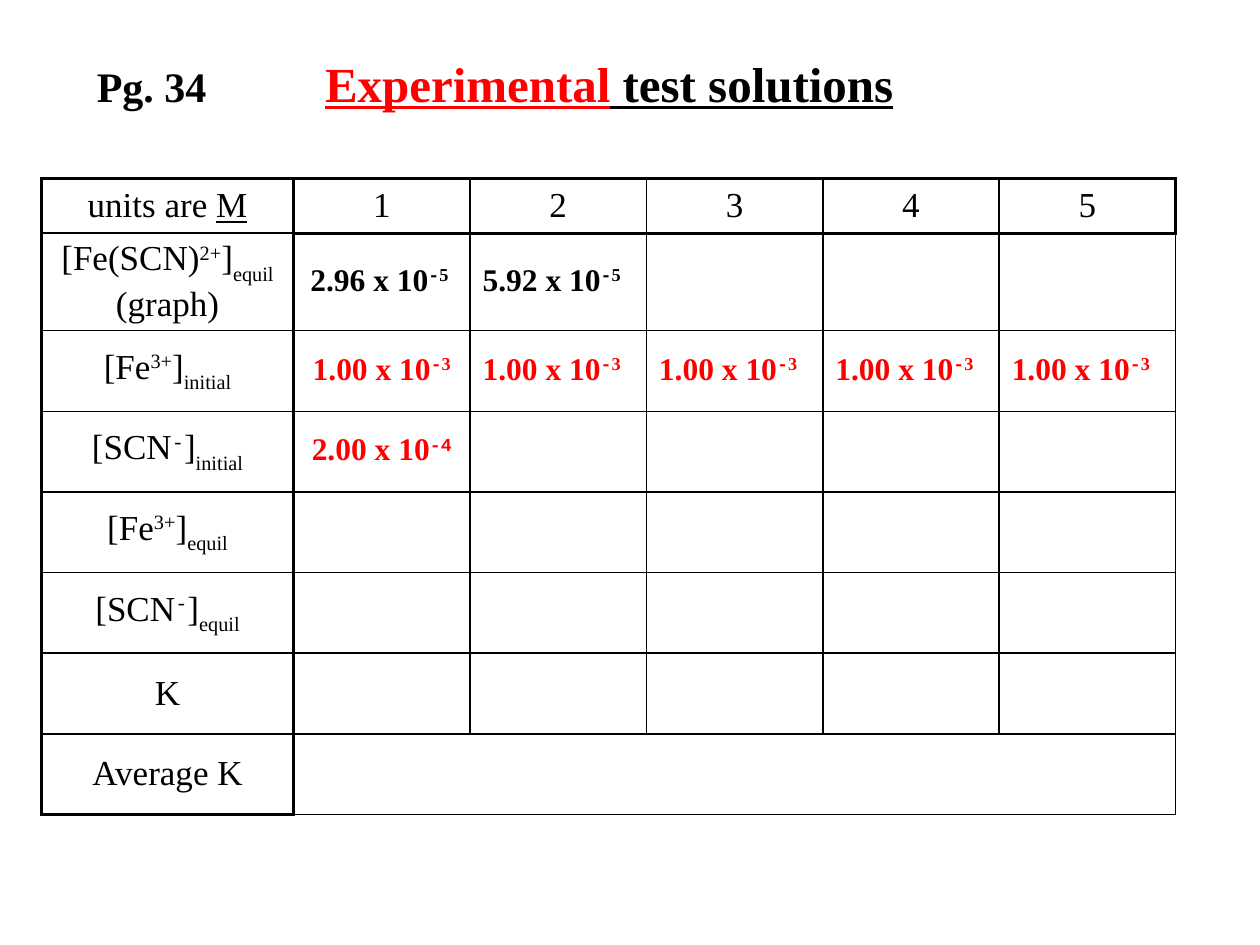
from lxml import etree
from pptx import Presentation
from pptx.dml.color import RGBColor
from pptx.enum import text
from pptx.oxml import ns
from pptx.util import Emu, Pt

BLACK, RED, WHITE = "000000", "FF0000", "FFFFFF"
SERIF, MONO = "Times New Roman", "Courier New"
CENTER, LEFT = text.PP_ALIGN.CENTER, text.PP_ALIGN.LEFT
MIDDLE, TOP = text.MSO_ANCHOR.MIDDLE, text.MSO_ANCHOR.TOP
COLUMNS, ROWS = 100, 75

HEADER = ["units are |=M", "1", "2", "3", "4", "5"]
LABELS = [
    "[Fe(SCN)|^2+|]|_equil| (graph)",
    "[Fe|^3+|]|_initial",
    "[SCN|~-|]|_initial",
    "[Fe|^3+|]|_equil",
    "[SCN|~-|]|_equil",
    "K",
    "Average K",
]
MEASURED = ["2.96 x 10|~-|^5 ", "5.92 x 10|~-|^5"]
IRON = ["1.00 x 10|~-|^3"] * 5
THIOCYANATE = ["2.00 x 10|~-4"]


def color(value):
    return RGBColor.from_string(value)


class Sheet:
    """Draws styled text and tables on one slide, placed on a grid."""

    def __init__(self, presentation):
        self.slide = presentation.slides.add_slide(presentation.slide_layouts[6])
        self.column = presentation.slide_width / COLUMNS
        self.row = presentation.slide_height / ROWS

    def box(self, left, top, width, height):
        return (Emu(round(left * self.column)), Emu(round(top * self.row)),
                Emu(round(width * self.column)), Emu(round(height * self.row)))

    def run(self, paragraph, content, size, ink=BLACK, bold=False, underline=False):
        run = paragraph.add_run()
        run.text = content
        font = run.font
        font.name, font.size, font.bold, font.underline = SERIF, Pt(size), bold, underline
        font.color.rgb = color(ink)
        return run

    def formula(self, paragraph, markup, size, ink=BLACK, bold=False):
        """Write pieces split by |, led by ^ raised, ~ raised mono, _ lowered or = underlined."""
        baselines = {"^": "30000", "~": "30000", "_": "-30000"}
        for piece in markup.split("|"):
            mark = piece[0]
            content = piece[1:] if mark in "^~_=" else piece
            run = self.run(paragraph, content, size, ink, bold, mark == "=")
            if mark in baselines:
                run.font._element.set("baseline", baselines[mark])
            if mark == "~":
                run.font.name = MONO

    def text_box(self, place, pieces, size, anchor=TOP, margins=(0.1, 0.05), wrap=True):
        frame = self.slide.shapes.add_textbox(*self.box(*place)).text_frame
        frame.word_wrap = wrap
        frame.auto_size = text.MSO_AUTO_SIZE.SHAPE_TO_FIT_TEXT
        frame.vertical_anchor = anchor
        frame.margin_left = frame.margin_right = Pt(margins[0] * 72)
        frame.margin_top = frame.margin_bottom = Pt(margins[1] * 72)
        for content, ink, underline in pieces:
            self.run(frame.paragraphs[0], content, size, ink, True, underline)

    def borders(self, cell, widths):
        properties = cell._tc.get_or_add_tcPr()
        for side, width in zip("LRTB", widths):
            line = etree.SubElement(properties, ns.qn(f"a:ln{side}"), w=str(Pt(width)))
            fill = etree.SubElement(line, ns.qn("a:solidFill"))
            etree.SubElement(fill, ns.qn("a:srgbClr"), val=BLACK)

    def table(self, place, widths, heights):
        shape = self.slide.shapes.add_table(len(heights), len(widths), *self.box(*place))
        table = shape.table
        table.first_row = table.horz_banding = False
        for column, width in zip(table.columns, widths):
            column.width = Emu(round(width * self.column))
        for row, height in zip(table.rows, heights):
            row.height = Emu(round(height * self.row))
        last_row, last_column = len(heights) - 1, len(widths) - 1
        for r in range(len(heights)):
            for c in range(len(widths)):
                heavy = (c <= 1,
                         c == 0 or (r == 0 and c == last_column),
                         r == 0 or (r == 1 and c > 0),
                         (r == 0 and c > 0) or (r == last_row and c == 0))
                cell = table.cell(r, c)
                self.borders(cell, [2 if side else 1 for side in heavy])
                cell.fill.solid()
                cell.fill.fore_color.rgb = color(WHITE)
                cell.vertical_anchor = MIDDLE
        return table

    def fill_cell(self, cell, markup, size=20, ink=BLACK, bold=False, align=CENTER):
        paragraph = cell.text_frame.paragraphs[0]
        paragraph.alignment = align
        self.formula(paragraph, markup, size, ink, bold)


def main():
    presentation = Presentation()
    presentation.slide_width, presentation.slide_height = Pt(720), Pt(540)
    sheet = Sheet(presentation)

    table = sheet.table((3.3, 14.2, 90, 50.4), [20] + [14] * 5, [4.3, 7.7] + [6.4] * 6)
    table.cell(7, 1).merge(table.cell(7, 5))
    for c, heading in enumerate(HEADER):
        sheet.fill_cell(table.cell(0, c), heading)
    for r, label in enumerate(LABELS, 1):
        sheet.fill_cell(table.cell(r, 0), label)
    for r, (values, ink) in enumerate([(MEASURED, BLACK), (IRON, RED), (THIOCYANATE, RED)], 1):
        for c, value in enumerate(values, 1):
            sheet.fill_cell(table.cell(r, c), value, 18, ink, True, CENTER if c == 1 else LEFT)

    sheet.text_box((25.8, 4.2, 52.5, 4.7),
                   [("Experimental", RED, True), (" test solutions", BLACK, True)],
                   28, MIDDLE, (0, 0))
    sheet.text_box((6.7, 4.3, 10.8, 5), [("Pg. 34", BLACK, False)], 24, wrap=False)
    presentation.save("out.pptx")


if __name__ == "__main__":
    main()
